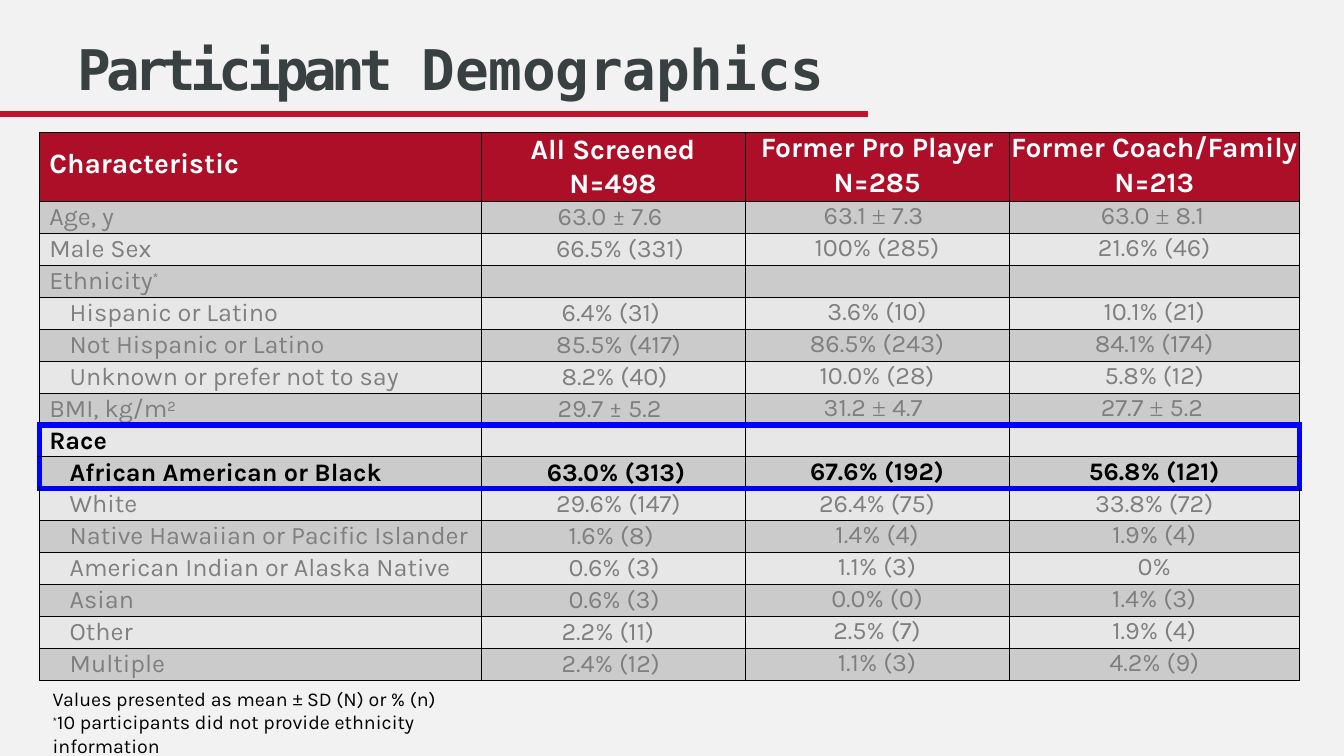
"""Build the participant demographics slide."""
import pptx
import pptx.dml.color
import pptx.enum.shapes
import pptx.enum.text
import pptx.oxml
import pptx.oxml.ns
import pptx.util
from lxml import etree

Pt = pptx.util.Pt
RGBColor = pptx.dml.color.RGBColor
ALIGN = pptx.enum.text.PP_ALIGN

BACKGROUND = RGBColor(0xF2, 0xF2, 0xF2)
RULE_RED = RGBColor(0xC8, 0x10, 0x2E)
HEADER_RED = RGBColor(0xAD, 0x0E, 0x28)
TITLE_GRAY = RGBColor(0x38, 0x40, 0x42)
MUTED = RGBColor(0x7F, 0x7F, 0x7F)
BAND_DARK = RGBColor(0xCB, 0xCB, 0xCB)
BAND_LIGHT = RGBColor(0xE7, 0xE7, 0xE7)
BLUE = RGBColor(0x00, 0x00, 0xFF)
BLACK = RGBColor(0x00, 0x00, 0x00)
WHITE = RGBColor(0xFF, 0xFF, 0xFF)

BODY_FONT = "Karla"
TITLE_FONT = "DejaVu Sans Mono"

COLUMN_WIDTHS = (315.4, 188.6, 188.6, 207.4)
HEADER_HEIGHT = 49.6
ROW_HEIGHT = 22.8
HIGHLIGHTED = (8, 9)
LABEL_INDENTS = (7, 21.6)
MEAN_INDENTS = (54.7, 56.2, 65.5)
SCREENED_INDENTS = {8: 62.6, 9: 57.6, 11: 53.6}
BOLD_INDENT = 47

HEADERS = (
    ("Characteristic",),
    ("All Screened", "N=498"),
    ("Former Pro Player", "N=285"),
    ("Former Coach/Family", "N=213"),
)
ROWS = (
    (0, "Age, y", "63.0 ± 7.6", "63.1 ± 7.3", "63.0 ± 8.1"),
    (0, "Male Sex", "66.5% (331)", "100% (285)", "21.6% (46)"),
    (0, "Ethnicity^*", "", "", ""),
    (1, "Hispanic or Latino", "6.4% (31)", "3.6% (10)", "10.1% (21)"),
    (1, "Not Hispanic or Latino", "85.5% (417)", "86.5% (243)", "84.1% (174)"),
    (1, "Unknown or prefer not to say", "8.2% (40)", "10.0% (28)", "5.8% (12)"),
    (0, "BMI, kg/m^2", "29.7 ± 5.2", "31.2 ± 4.7", "27.7 ± 5.2"),
    (0, "Race", "", "", ""),
    (1, "African American or Black", "63.0% (313)", "67.6% (192)", "56.8% (121)"),
    (1, "White", "29.6% (147)", "26.4% (75)", "33.8% (72)"),
    (1, "Native Hawaiian or Pacific Islander", "1.6% (8)", "1.4% (4)", "1.9% (4)"),
    (1, "American Indian or Alaska Native", "0.6% (3)", "1.1% (3)", "0%"),
    (1, "Asian", "0.6% (3)", "0.0% (0)", "1.4% (3)"),
    (1, "Other", "2.2% (11)", "2.5% (7)", "1.9% (4)"),
    (1, "Multiple", "2.4% (12)", "1.1% (3)", "4.2% (9)"),
)


def add_run(paragraph, text, size, color, bold=False, font=BODY_FONT, raised=0, spacing=0):
    run = paragraph.add_run()
    run.text = text
    run.font.name = font
    run.font.size = Pt(size)
    run.font.bold = bold
    run.font.color.rgb = color
    properties = run._r.get_or_add_rPr()
    if raised:
        properties.set("baseline", str(raised * 1000))
    if spacing:
        properties.set("spc", str(round(spacing * 100)))


def indent(paragraph, points):
    properties = paragraph._p.get_or_add_pPr()
    properties.set("marL", str(int(Pt(points))))
    properties.set("indent", "0")


def set_insets(holder, top):
    holder.margin_left = holder.margin_right = holder.margin_bottom = 0
    holder.margin_top = Pt(top)


def set_borders(cell, row, column):
    first, last = HIGHLIGHTED
    inside = first <= row <= last
    blue_sides = {
        "L": inside and column == 0,
        "R": inside and column == len(COLUMN_WIDTHS) - 1,
        "T": row in (first, last + 1),
        "B": row in (first - 1, last),
    }
    properties = cell._tc.get_or_add_tcPr()
    for side, blue in blue_sides.items():
        color, width = (BLUE, 4.5) if blue else (BLACK, 0.5)
        properties.append(pptx.oxml.parse_xml(
            f'<a:ln{side} {pptx.oxml.ns.nsdecls("a")} w="{int(Pt(width))}">'
            f'<a:solidFill><a:srgbClr val="{color}"/></a:solidFill></a:ln{side}>'))


def format_cell(cell, row, column, color, top):
    set_insets(cell, top)
    set_borders(cell, row, column)
    cell.fill.solid()
    cell.fill.fore_color.rgb = color


def fill_header(cell, column, lines):
    top = (11.5, 0.7, 0, 0)[column]
    format_cell(cell, 0, column, HEADER_RED, top)
    frame = cell.text_frame
    for number, text in enumerate(lines):
        paragraph = frame.add_paragraph() if number else frame.paragraphs[0]
        if column == 0:
            indent(paragraph, LABEL_INDENTS[0])
        else:
            paragraph.alignment = ALIGN.CENTER
            paragraph.line_spacing = Pt(24 if column == 1 else 23.3)
            if number and column > 1:
                paragraph.space_before = Pt(1.9)
        add_run(paragraph, text, 20, WHITE, True)


def fill_body(cell, row, column, level, text):
    format_cell(cell, row, column, BAND_DARK if row % 2 else BAND_LIGHT, 0.7 if column < 2 else 0)
    bold = row in HIGHLIGHTED
    color = BLACK if bold else MUTED
    paragraph = cell.text_frame.paragraphs[0]
    paragraph.line_spacing = Pt(21.3)
    if column == 0:
        indent(paragraph, LABEL_INDENTS[level])
        label, _, mark = text.partition("^")
        add_run(paragraph, label, 18, color, bold)
        if mark:
            add_run(paragraph, mark, 18, color, bold, raised=23)
    elif "±" in text:
        indent(paragraph, MEAN_INDENTS[column - 1])
        mean, _, deviation = text.partition("± ")
        add_run(paragraph, mean, 18, color)
        add_run(paragraph, "± ", 18, color, font=BODY_FONT if column == 1 else "Times New Roman")
        add_run(paragraph, deviation, 18, color)
    elif text:
        if column == 1:
            indent(paragraph, BOLD_INDENT if bold else SCREENED_INDENTS[len(text)])
        else:
            paragraph.alignment = ALIGN.CENTER
        add_run(paragraph, text, 18, color, bold)


def add_demographics(slide):
    height = HEADER_HEIGHT + ROW_HEIGHT * len(ROWS)
    table = slide.shapes.add_table(len(ROWS) + 1, len(COLUMN_WIDTHS), Pt(28.2), Pt(94.3),
                                   Pt(sum(COLUMN_WIDTHS)), Pt(height)).table
    table.horz_banding = False
    for column, width in zip(table.columns, COLUMN_WIDTHS):
        column.width = Pt(width)
    for number, row in enumerate(table.rows):
        row.height = Pt(ROW_HEIGHT if number else HEADER_HEIGHT)
    for column, lines in enumerate(HEADERS):
        fill_header(table.cell(0, column), column, lines)
    for row, (level, *texts) in enumerate(ROWS, start=1):
        for column, text in enumerate(texts):
            fill_body(table.cell(row, column), row, column, level, text)


def add_title(slide):
    title = slide.shapes.title
    title.left, title.top, title.width, title.height = Pt(54.7), Pt(23.8), Pt(885.6), Pt(50.4)
    frame = title.text_frame
    set_insets(frame, 0.7)
    frame.word_wrap = True
    frame.auto_size = pptx.enum.text.MSO_AUTO_SIZE.NONE
    frame.vertical_anchor = pptx.enum.text.MSO_ANCHOR.TOP
    paragraph = frame.paragraphs[0]
    paragraph.alignment = ALIGN.LEFT
    indent(paragraph, 0.9)
    add_run(paragraph, "Participant ", 40, TITLE_GRAY, True, TITLE_FONT, spacing=-3.9)
    add_run(paragraph, "Demographics", 40, TITLE_GRAY, True, TITLE_FONT, spacing=-0.1)


def add_rule(slide):
    rule = slide.shapes.add_connector(pptx.enum.shapes.MSO_CONNECTOR.STRAIGHT,
                                      0, Pt(81.4), Pt(620), Pt(81.4))
    rule.line.color.rgb = RULE_RED
    rule.line.width = Pt(4)
    etree.SubElement(rule._element.spPr, pptx.oxml.ns.qn("a:effectLst"))


def add_footnotes(slide):
    frame = slide.shapes.add_textbox(Pt(36.7), Pt(488.2), Pt(329), Pt(37.4)).text_frame
    frame.word_wrap = True
    set_insets(frame, 2.2)
    values = frame.paragraphs[0]
    add_run(values, "Values presented as mean ", 14, BLACK)
    add_run(values, "± ", 14, BLACK, font="Calibri")
    add_run(values, "SD (N) or % (n)", 14, BLACK)
    missing = frame.add_paragraph()
    add_run(missing, "*", 13.5, BLACK, raised=25)
    add_run(missing, "10 participants did not provide ethnicity information", 14, BLACK)
    for paragraph in frame.paragraphs:
        indent(paragraph, 0.9)


def main():
    presentation = pptx.Presentation()
    presentation.slide_width, presentation.slide_height = Pt(960), Pt(540)
    slide = presentation.slides.add_slide(presentation.slide_layouts[5])
    slide.background.fill.solid()
    slide.background.fill.fore_color.rgb = BACKGROUND
    add_rule(slide)
    add_title(slide)
    add_footnotes(slide)
    add_demographics(slide)
    presentation.save("out.pptx")


if __name__ == "__main__":
    main()
